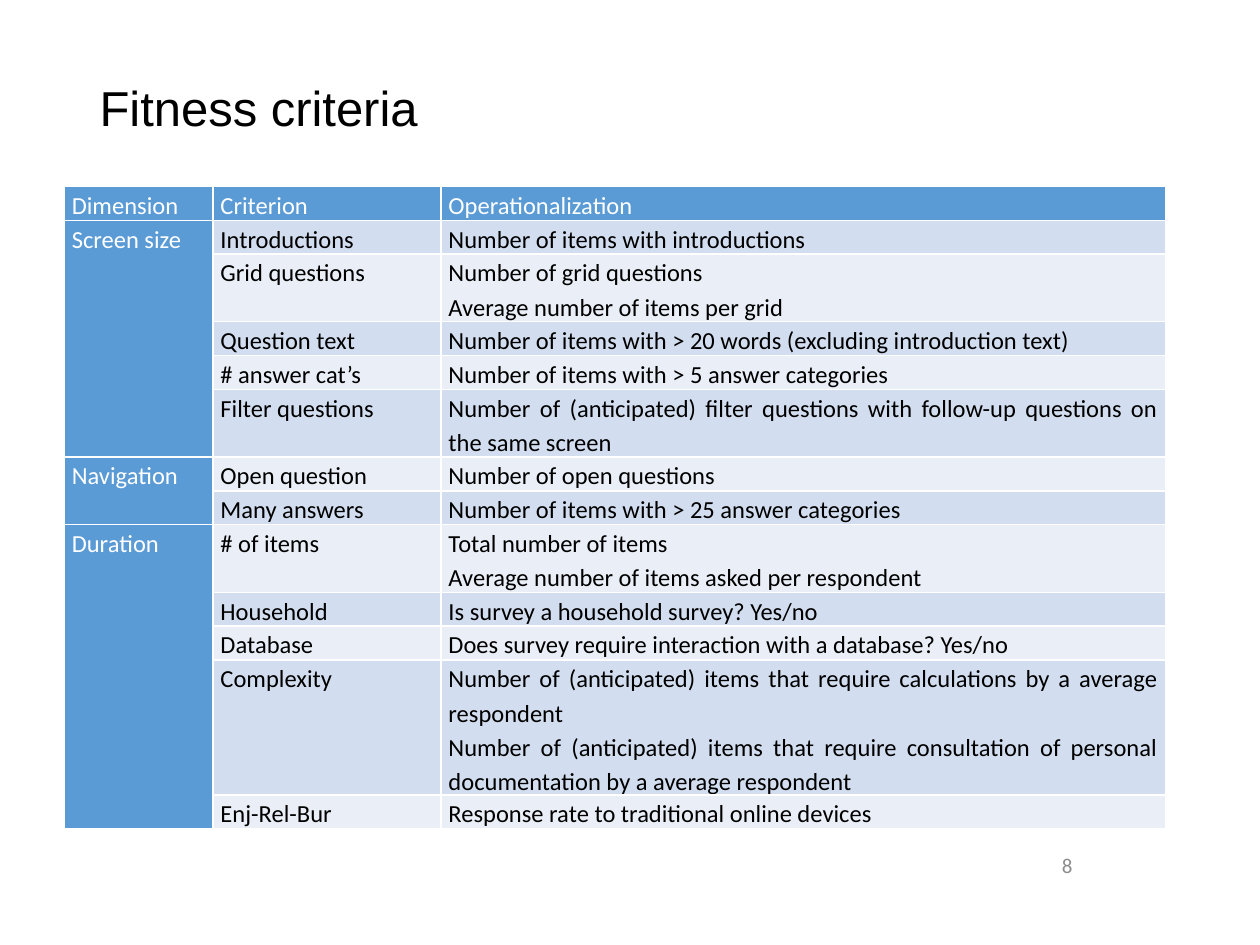
"""Build the slide with the table of survey fitness criteria."""
from pptx import Presentation
from pptx.dml.color import RGBColor
from pptx.enum.text import MSO_ANCHOR, PP_ALIGN
from pptx.util import Inches, Pt

LEFT, RIGHT, JUSTIFY = PP_ALIGN.LEFT, PP_ALIGN.RIGHT, PP_ALIGN.JUSTIFY
MIDDLE = MSO_ANCHOR.MIDDLE
TITLE_ONLY = 5
COLORS = {
    "text": "000000",
    "white": "FFFFFF",
    "header": "5B9BD5",
    "odd": "D2DEEF",
    "even": "EAEFF7",
    "number": "8C8C8C",
}
COLUMN_WIDTHS = [1.18, 1.81, 5.75]
LINE_HEIGHT = 0.2
HEADINGS = ("Dimension", "Criterion", "Operationalization")
DIMENSIONS = {
    "Screen size": [
        ("Introductions", "Number of items with introductions", 1),
        ("Grid questions", "Number of grid questions\nAverage number of items per grid", 2),
        ("Question text", "Number of items with > 20 words (excluding introduction text)", 1),
        ("# answer cat’s", "Number of items with > 5 answer categories", 1),
        ("Filter questions", "Number of (anticipated) filter questions with follow-up "
         "questions on the same screen", 2),
    ],
    "Navigation": [
        ("Open question", "Number of open questions", 1),
        ("Many answers", "Number of items with > 25 answer categories", 1),
    ],
    "Duration": [
        ("# of items", "Total number of items\nAverage number of items asked per respondent", 2),
        ("Household", "Is survey a household survey? Yes/no", 1),
        ("Database", "Does survey require interaction with a database? Yes/no", 1),
        ("Complexity", "Number of (anticipated) items that require calculations by a "
         "average respondent\nNumber of (anticipated) items that require consultation of "
         "personal documentation by a average respondent", 4),
        ("Enj-Rel-Bur", "Response rate to traditional online devices", 1),
    ],
}


def write_text(text_frame, text, size, font_name, color, alignment, spacing):
    text_frame.text = text
    for paragraph in text_frame.paragraphs:
        paragraph.alignment = alignment
        paragraph.line_spacing = spacing
        for run in paragraph.runs:
            run.font.size = Pt(size)
            run.font.name = font_name
            run.font.bold = False
            run.font.color.rgb = RGBColor.from_string(COLORS[color])


def fill_cell(cell, text, fill, color):
    cell.margin_left = cell.margin_right = Inches(0.06)
    cell.margin_top = cell.margin_bottom = 0
    cell.fill.solid()
    cell.fill.fore_color.rgb = RGBColor.from_string(COLORS[fill])
    write_text(cell.text_frame, text, 14, "Calibri", color, JUSTIFY, 1.15)


presentation = Presentation()
presentation.slide_width = Inches(10)
presentation.slide_height = Inches(7.5)
slide = presentation.slides.add_slide(presentation.slide_layouts[TITLE_ONLY])

title = slide.shapes.title
title.left, title.top = Inches(0.69), Inches(0.4)
title.width, title.height = Inches(8.62), Inches(0.95)
title.text_frame.vertical_anchor = MIDDLE
write_text(title.text_frame, "Fitness criteria", 28, "Arial", "text", LEFT, 0.9)

number_box = slide.shapes.add_textbox(Inches(7.99), Inches(6.63), Inches(0.62), Inches(0.47))
number_box.text_frame.word_wrap = True
number_box.text_frame.vertical_anchor = MIDDLE
write_text(number_box.text_frame, "8", 12, "Calibri", "number", RIGHT, 1.0)

row_count = 1 + sum(len(criteria) for criteria in DIMENSIONS.values())
table_frame = slide.shapes.add_table(
    row_count, len(HEADINGS), Inches(0.51), Inches(1.48), Inches(8.74), Inches(5.1))
table = table_frame.table
table.first_col = True
for column, width in zip(table.columns, COLUMN_WIDTHS):
    column.width = Inches(width)

table.rows[0].height = Inches(LINE_HEIGHT)
for column_index, heading in enumerate(HEADINGS):
    fill_cell(table.cell(0, column_index), heading, "header", "white")

row_index = 1
for dimension, criteria in DIMENSIONS.items():
    dimension_cell = table.cell(row_index, 0)
    dimension_cell.merge(table.cell(row_index + len(criteria) - 1, 0))
    fill_cell(dimension_cell, dimension, "header", "white")
    for criterion, operationalization, line_count in criteria:
        band = "odd" if row_index % 2 else "even"
        table.rows[row_index].height = Inches(LINE_HEIGHT * line_count)
        fill_cell(table.cell(row_index, 1), criterion, band, "text")
        fill_cell(table.cell(row_index, 2), operationalization, band, "text")
        row_index += 1
table_frame.height = Inches(5.1)

presentation.save("out.pptx")
